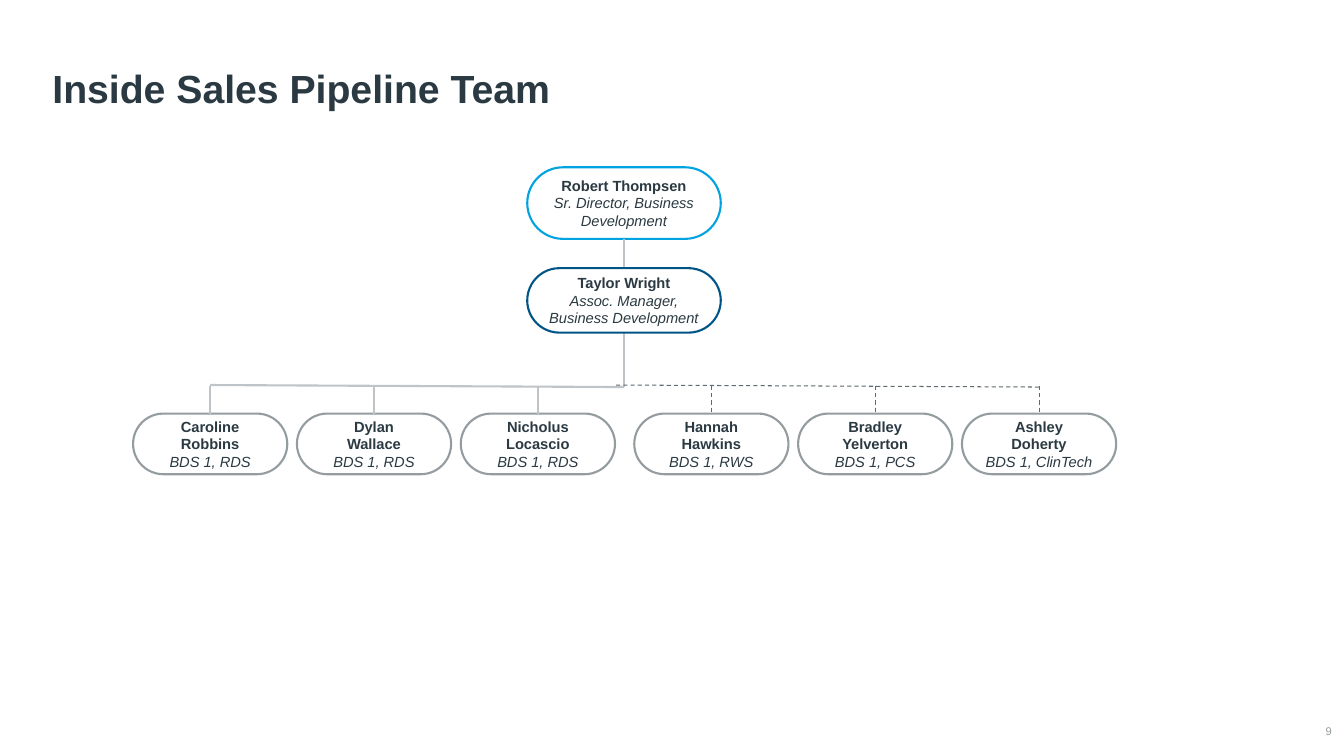
import pptx
import pptx.dml.color
import pptx.enum.dml
import pptx.enum.shapes
import pptx.enum.text
import pptx.oxml
import pptx.oxml.ns
import pptx.util

WIDTH, HEIGHT = 13.33, 7.5
INK, GREY, RULE, DASH = "2B3A42", "959CA0", "BEC4C8", "606B71"
CYAN, NAVY, WHITE = "00A3E0", "005587", "FFFFFF"
BUS_DROP = 0.27
ALIGN = pptx.enum.text.PP_ALIGN
ANCHOR = pptx.enum.text.MSO_ANCHOR

# Boxes are left, top, width, height in percent of the slide's size.
TITLE_BOX = (3.15, 4.27, 93.02, 11.2)
NUMBER_BOX = (96.17, 95.47, 2.93, 2.53)
DIRECTOR_BOX = (39.23, 22.13, 14.4, 9.47)
MANAGER_BOX = (39.23, 35.47, 14.4, 8.53)
DIRECT_BOX = (9.9, 50.93, 35.86, 11.8)
DOTTED_BOX = (47.19, 50.93, 35.86, 11.8)

DIRECT_TEAM = [
    ("Caroline", "Robbins", "BDS 1, RDS"),
    ("Dylan", "Wallace", "BDS 1, RDS"),
    ("Nicholus", "Locascio", "BDS 1, RDS"),
]
DOTTED_TEAM = [
    ("Hannah", "Hawkins", "BDS 1, RWS"),
    ("Bradley", "Yelverton", "BDS 1, PCS"),
    ("Ashley", "Doherty", "BDS 1, ClinTech"),
]


def color(value):
    return pptx.dml.color.RGBColor.from_string(value)


def across(share):
    return pptx.util.Inches(WIDTH * share / 100)


def down(share):
    return pptx.util.Inches(HEIGHT * share / 100)


def place(box):
    left, top, width, height = box
    return across(left), down(top), across(width), down(height)


def style(para, size, ink, bold=False, italic=False):
    para.font.name = "Arial"
    para.font.size = pptx.util.Pt(size)
    para.font.color.rgb = color(ink)
    para.font.bold = bold
    para.font.italic = italic


def add_title(page, box, text):
    title = page.shapes.title
    title.left, title.top, title.width, title.height = place(box)
    frame = title.text_frame
    frame.text = text
    frame.word_wrap = True
    frame.auto_size = pptx.enum.text.MSO_AUTO_SIZE.NONE
    frame.vertical_anchor = ANCHOR.BOTTOM
    para = frame.paragraphs[0]
    para.alignment = ALIGN.LEFT
    para.line_spacing = 0.9
    style(para, 28, INK, bold=True)


def add_page_number(page, box, text):
    frame = page.shapes.add_textbox(*place(box)).text_frame
    frame.margin_left = frame.margin_right = 0
    frame.margin_top = frame.margin_bottom = 0
    frame.word_wrap = True
    frame.vertical_anchor = ANCHOR.MIDDLE
    para = frame.paragraphs[0]
    para.text = text
    para.alignment = ALIGN.RIGHT
    style(para, 8, GREY)


def add_person(page, box, lines, outline):
    """Draw a pill with bold name lines and the role, last, in italics."""
    pill = page.shapes.add_shape(
        pptx.enum.shapes.MSO_SHAPE.ROUNDED_RECTANGLE, *place(box))
    pill.adjustments[0] = 0.5
    pill.shadow.inherit = False
    pill.fill.solid()
    pill.fill.fore_color.rgb = color(WHITE)
    pill.line.color.rgb = color(outline)
    pill.line.width = pptx.util.Pt(1.5)
    frame = pill.text_frame
    frame.word_wrap = True
    frame.vertical_anchor = ANCHOR.MIDDLE
    for index, text in enumerate(lines):
        para = frame.add_paragraph() if index else frame.paragraphs[0]
        para.text = text
        para.alignment = ALIGN.CENTER
        is_role = index == len(lines) - 1
        style(para, 10.5, INK, bold=not is_role, italic=is_role)
    return pill


def add_line(page, start, end, dashed=False):
    line = page.shapes.add_connector(
        pptx.enum.shapes.MSO_CONNECTOR.STRAIGHT,
        across(start[0]), down(start[1]), across(end[0]), down(end[1]))
    line.line.color.rgb = color(DASH if dashed else RULE)
    line.line.width = pptx.util.Pt(0.75 if dashed else 1.5)
    if dashed:
        line.line.dash_style = pptx.enum.dml.MSO_LINE.DASH
    properties = line._element.spPr
    properties.append(pptx.oxml.parse_xml(
        "<a:effectLst %s/>" % pptx.oxml.ns.nsdecls("a")))
    return line


def add_leaders(page, director_box, manager_box, bus_level):
    """Draw both leaders and the trunk that runs behind the manager."""
    left, top, width, height = director_box
    center = left + width / 2
    director = add_person(page, director_box, (
        "Robert Thompsen", "Sr. Director, Business Development"), CYAN)
    trunk = add_line(page, (center, top + height), (center, bus_level))
    trunk.begin_connect(director, 2)
    add_person(page, manager_box, (
        "Taylor Wright", "Assoc. Manager, Business Development"), NAVY)
    return center


def add_team(page, box, members, bus_start=None, bus_end=None, dashed=False):
    """Hang a row of people from a bus, which spans their centres by default."""
    left, top, width, height = box
    card_width, card_height = width * 0.32, height * 0.68
    pitch = (width - card_width) / (len(members) - 1)
    centers = [left + card_width / 2 + pitch * i for i in range(len(members))]
    start = centers[0] if bus_start is None else bus_start
    end = centers[-1] if bus_end is None else bus_end
    add_line(page, (start, top), (end, top + BUS_DROP), dashed)
    card_top = top + height - card_height
    for center, lines in zip(centers, members):
        card = add_person(page, (
            center - card_width / 2, card_top, card_width, card_height),
            lines, GREY)
        drop = add_line(page, (center, top + BUS_DROP / 2),
                        (center, card_top), dashed)
        drop.end_connect(card, 0)


def main():
    deck = pptx.Presentation()
    deck.slide_width = pptx.util.Inches(WIDTH)
    deck.slide_height = pptx.util.Inches(HEIGHT)
    page = deck.slides.add_slide(deck.slide_layouts.get_by_name("Title Only"))
    add_title(page, TITLE_BOX, "Inside Sales Pipeline Team")
    add_page_number(page, NUMBER_BOX, "9")
    trunk = add_leaders(page, DIRECTOR_BOX, MANAGER_BOX,
                        DIRECT_BOX[1] + BUS_DROP)
    add_team(page, DIRECT_BOX, DIRECT_TEAM, bus_end=trunk)
    add_team(page, DOTTED_BOX, DOTTED_TEAM, bus_start=45.84, dashed=True)
    deck.save("out.pptx")


if __name__ == "__main__":
    main()
